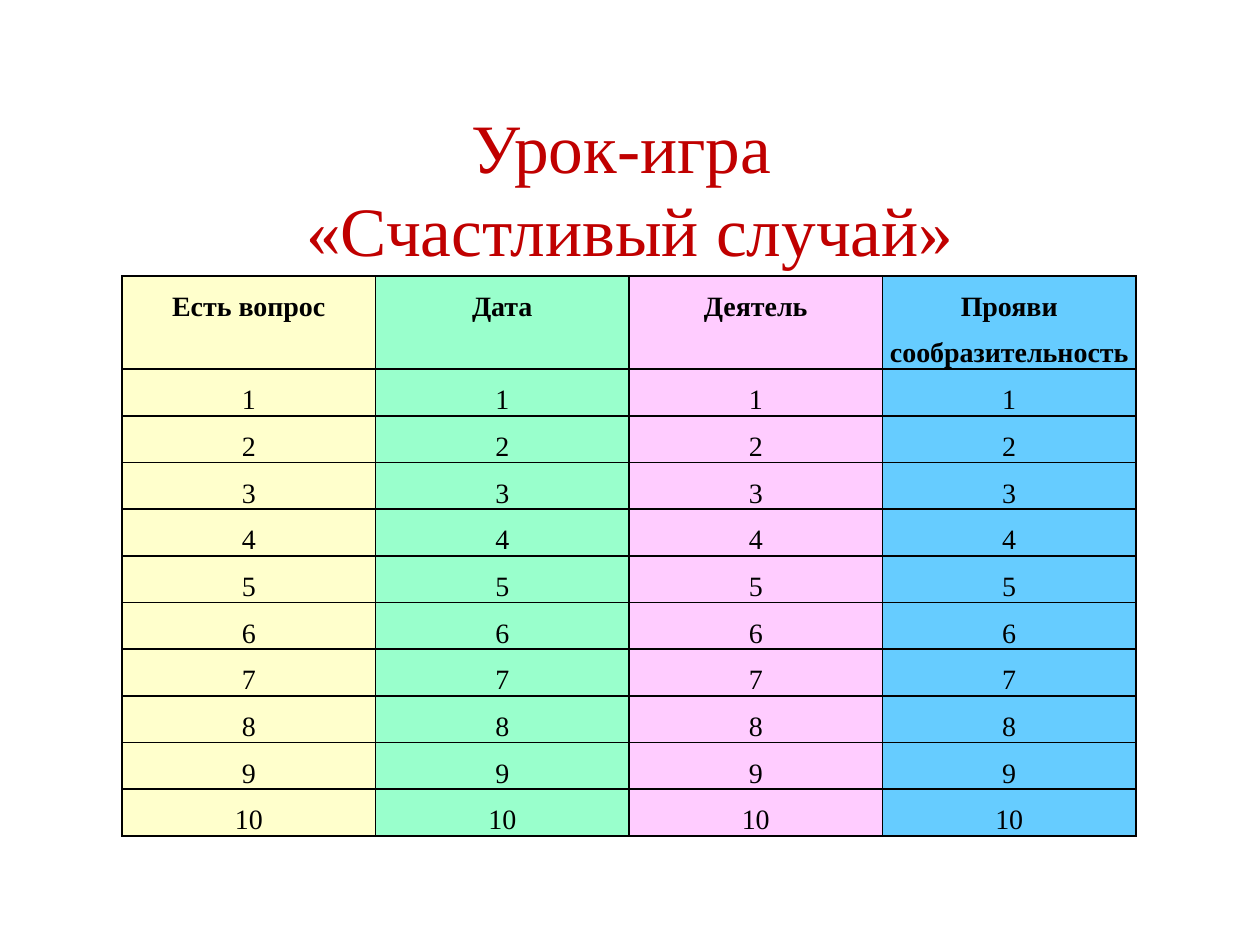
"""Build the title slide of a lesson game with its board of numbered questions."""
import pptx
import pptx.dml.color
import pptx.enum.text
import pptx.oxml
import pptx.oxml.ns
import pptx.util
from pptx.util import Cm


def color(hex_code):
    return pptx.dml.color.RGBColor.from_string(hex_code)


def write(frame, text, *, font, size, ink, bold=False, spacing=None):
    frame.text = text
    for paragraph in frame.paragraphs:
        paragraph.alignment = pptx.enum.text.PP_ALIGN.CENTER
        paragraph.line_spacing = spacing
        for run in paragraph.runs:
            run.font.name = font
            run.font.size = pptx.util.Pt(size)
            run.font.bold = bold
            run.font.color.rgb = color(ink)


class GameSlide:
    font = "Times New Roman"
    title_ink = "C00000"
    board_ink = "000000"
    border_width = pptx.util.Pt(1)

    def __init__(self, deck):
        self.slide = deck.slides.add_slide(deck.slide_layouts[5])

    def title(self, text, left, top, width, height):
        heading = self.slide.shapes.title
        heading.left, heading.top = Cm(left), Cm(top)
        heading.width, heading.height = Cm(width), Cm(height)
        heading.text_frame.vertical_anchor = pptx.enum.text.MSO_ANCHOR.MIDDLE
        write(heading.text_frame, text, font=self.font, size=39.6, ink=self.title_ink)

    def border(self, cell):
        properties = cell._tc.get_or_add_tcPr()
        for position, side in enumerate(("lnL", "lnR", "lnT", "lnB")):
            properties.insert(position, pptx.oxml.parse_xml(
                f'<a:{side} {pptx.oxml.ns.nsdecls("a")} w="{self.border_width}">'
                f'<a:solidFill><a:srgbClr val="{self.board_ink}"/></a:solidFill>'
                f'</a:{side}>'))

    def board(self, topics, questions, left, top, column_width, row_height):
        rows = [list(topics)] + [[str(n)] * len(topics) for n in range(1, questions + 1)]
        board = self.slide.shapes.add_table(
            len(rows), len(topics), Cm(left), Cm(top),
            Cm(column_width * len(topics)), Cm(row_height * (len(rows) + 1))).table
        for row_index, labels in enumerate(rows):
            is_header = row_index == 0
            board.rows[row_index].height = Cm(row_height * (2 if is_header else 1))
            for column_index, (label, fill) in enumerate(zip(labels, topics.values())):
                cell = board.cell(row_index, column_index)
                cell.margin_left = cell.margin_right = Cm(0.13)
                cell.margin_top = cell.margin_bottom = 0
                cell.fill.solid()
                cell.fill.fore_color.rgb = color(fill)
                self.border(cell)
                write(cell.text_frame, label, font=self.font, size=16,
                      ink=self.board_ink, bold=is_header, spacing=1.5)


def main():
    deck = pptx.Presentation()
    deck.slide_width, deck.slide_height = Cm(25.4), Cm(19.05)
    game = GameSlide(deck)
    game.title("Урок-игра \v«Счастливый случай»", 2.39, 2.18, 20.62, 3.18)
    topics = {
        "Есть вопрос": "FFFFCC",
        "Дата": "99FFCC",
        "Деятель": "FFCCFF",
        "Прояви сообразительность": "66CCFF",
    }
    game.board(topics, 10, left=2.46, top=5.56, column_width=5.11, row_height=0.94)
    deck.save("out.pptx")


if __name__ == "__main__":
    main()
